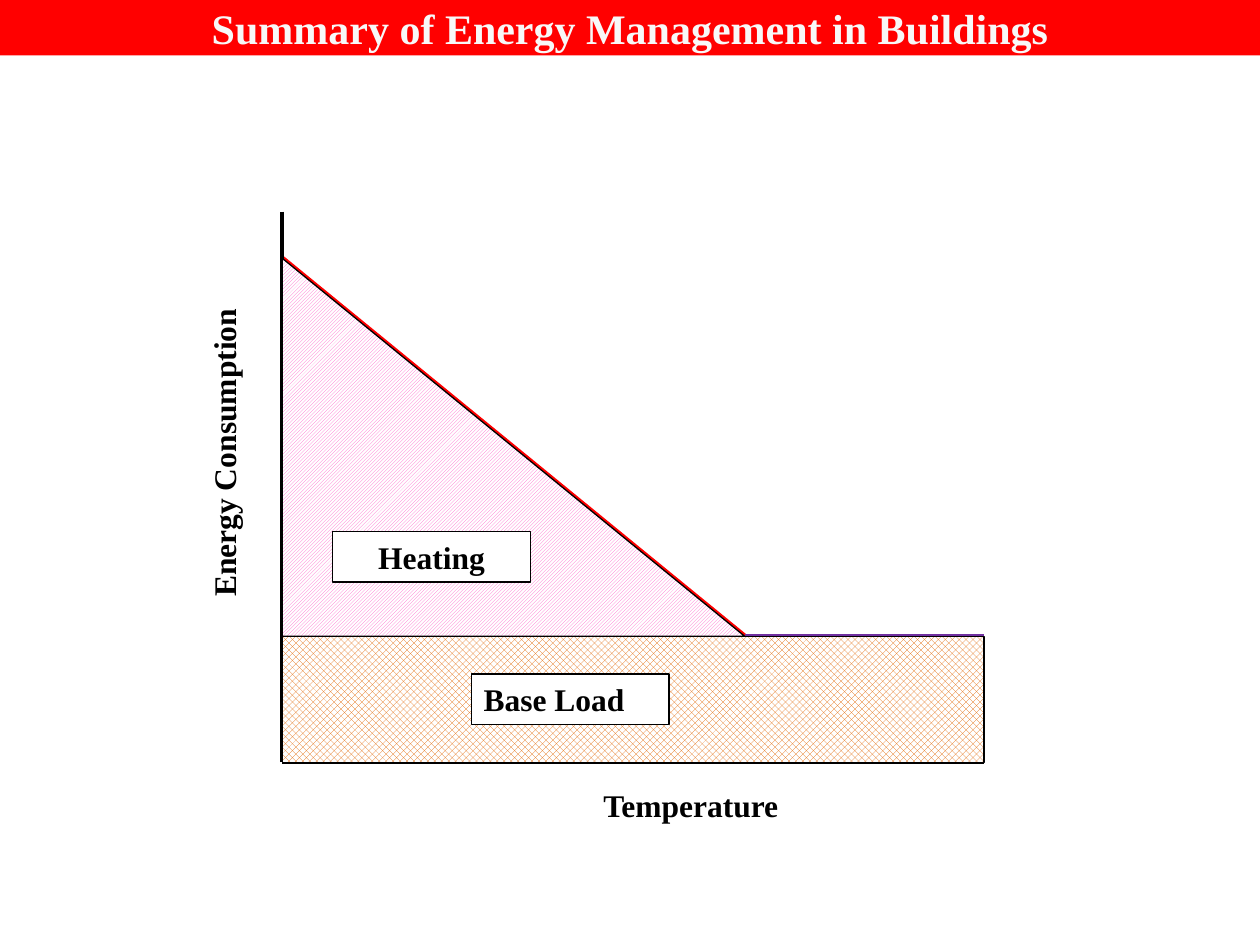
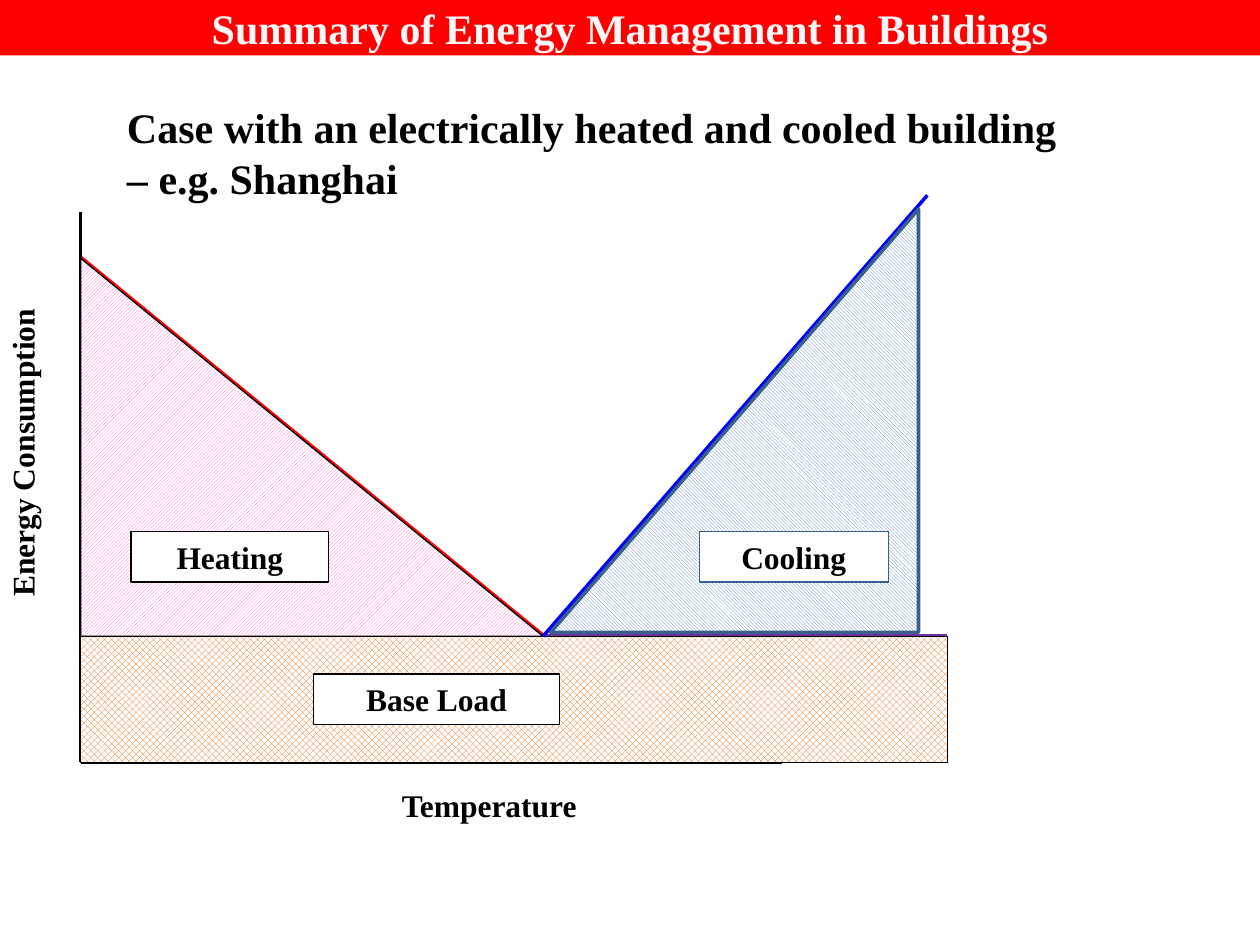
from pptx import Presentation
from pptx.dml.color import RGBColor
from pptx.enum.dml import MSO_PATTERN as Pattern
from pptx.enum.shapes import MSO_CONNECTOR, MSO_SHAPE as Shape
from pptx.enum.text import MSO_ANCHOR, MSO_AUTO_SIZE as AutoSize, PP_ALIGN as Align
from pptx.oxml.ns import qn
from pptx.util import Inches, Pt
from lxml.etree import SubElement

BLACK = RGBColor(0x00, 0x00, 0x00)
WHITE = RGBColor(0xFF, 0xFF, 0xFF)
TITLE_TEXT = RGBColor(0xF8, 0xF8, 0xF8)
RED = RGBColor(0xFF, 0x00, 0x00)
PURPLE = RGBColor(0x70, 0x30, 0xA0)
ORANGE = RGBColor(0xE4, 0x6C, 0x0A)
PINK = RGBColor(0xFF, 0x66, 0xCC)
BLUE = RGBColor(0x00, 0x00, 0xFF)
SOFT_BLUE = RGBColor(0x4F, 0x81, 0xBD)
DARK_BLUE = RGBColor(0x3A, 0x5F, 0x8C)

FONT = "Times New Roman"
TITLE = "Summary of Energy Management in Buildings"
COLS, ROWS = 100, 75  # slide grid

# Rows and widths shared by both energy graphs
AXIS_TOP, HEAT_TOP, BASE_TOP, FLOOR = 16.8, 20.5, 50.5, 60.5
LABEL_ROW, LABEL_H = 42.2, 4
HEAT_W, AXIS_W = 36.7, 55.7


class Deck:
    """Holds the presentation, its style and the current slide."""

    def __init__(self):
        self.prs = Presentation()
        self.prs.slide_width, self.prs.slide_height = Inches(10), Inches(7.5)

    def grid(self, col, row):
        return (round(col * self.prs.slide_width / COLS),
                round(row * self.prs.slide_height / ROWS))

    def set_text(self, shape, text, size=18, color=BLACK, align=Align.LEFT):
        tf = shape.text_frame
        tf.text = text
        tf.word_wrap = True
        tf.auto_size = AutoSize.SHAPE_TO_FIT_TEXT
        p = tf.paragraphs[0]
        p.alignment = align
        font = p.runs[0].font
        font.name, font.size, font.bold = FONT, Pt(size), True
        font.color.rgb = color

    def slide(self, title):
        self.s = self.prs.slides.add_slide(self.prs.slide_layouts[5])
        sp = self.s.shapes.title
        sp.left, sp.top = 0, 0
        sp.width, sp.height = self.grid(COLS, 4.4)
        sp.fill.solid()
        sp.fill.fore_color.rgb = RED
        self.set_text(sp, title, 24, TITLE_TEXT, Align.CENTER)
        sp.text_frame.auto_size = AutoSize.NONE
        sp.text_frame.vertical_anchor = MSO_ANCHOR.MIDDLE

    def line(self, start, end, color=BLACK, width=2):
        cn = self.s.shapes.add_connector(
            MSO_CONNECTOR.STRAIGHT, *self.grid(*start), *self.grid(*end))
        cn.line.color.rgb = color
        cn.line.width = Pt(width)
        SubElement(cn.element.spPr, qn("a:effectLst"))

    def text(self, col, row, width, height, text, size=18, rotation=0):
        sp = self.s.shapes.add_textbox(*self.grid(col, row), *self.grid(width, height))
        sp.rotation = rotation
        self.set_text(sp, text, size)

    def box(self, kind, col, row, width, height, line=BLACK, weight=0.75):
        sp = self.s.shapes.add_shape(
            kind, *self.grid(col, row), *self.grid(width, height))
        sp.shadow.inherit = False
        sp.line.color.rgb = line
        sp.line.width = Pt(weight)
        return sp

    def area(self, kind, col, row, width, height, pattern, color, flip=False, **outline):
        sp = self.box(kind, col, row, width, height, **outline)
        sp.fill.patterned()
        sp.fill.pattern = pattern
        sp.fill.fore_color.rgb = color
        sp.fill.back_color.rgb = WHITE
        if flip:
            sp.element.spPr.xfrm.set("flipH", "1")

    def label(self, col, row, width, text, align=Align.CENTER, line=BLACK):
        sp = self.box(Shape.RECTANGLE, col, row, width, LABEL_H, line)
        sp.fill.solid()
        sp.fill.fore_color.rgb = WHITE
        self.set_text(sp, text, align=align)

    def energy_graph(self, x, base_w, base_label_x, base_label_w, base_align):
        balance = (x + HEAT_W, BASE_TOP)
        # Consumption lines
        self.line((x, HEAT_TOP), balance, RED, 3)
        self.line(balance, (x + base_w, BASE_TOP), PURPLE, 3)
        # Axes and their names
        self.line((x, AXIS_TOP), (x, FLOOR))
        self.line((x + AXIS_W, FLOOR), (x, FLOOR))
        self.text(x + 24.5, 61.9, 29.9, LABEL_H, "Temperature")
        self.text(x - 19.6, 31.4, 29.9, LABEL_H, "Energy Consumption", rotation=270)
        # Base load
        self.area(Shape.RECTANGLE, x, BASE_TOP, base_w, FLOOR - BASE_TOP,
                  Pattern.SOLID_DIAMOND, ORANGE)
        self.label(base_label_x, 53.5, base_label_w, "Base Load", base_align)
        # Heating
        self.area(Shape.RIGHT_TRIANGLE, x, HEAT_TOP, HEAT_W, BASE_TOP - HEAT_TOP,
                  Pattern.LIGHT_UPWARD_DIAGONAL, PINK)
        self.label(x + 4, LABEL_ROW, 15.7, "Heating")
        return balance


def main():
    deck = Deck()

    # Slide 1: heating only
    deck.slide(TITLE)
    deck.energy_graph(22.4, AXIS_W, 37.4, 15.7, Align.LEFT)

    # Slide 2: heating and cooling
    deck.slide(TITLE)
    balance = deck.energy_graph(6.4, 68.8, 24.9, 19.5, Align.CENTER)
    deck.line(balance, (73.6, 15.5), BLUE)
    deck.area(Shape.RIGHT_TRIANGLE, 43.7, 16.6, 29.2, 33.6,
              Pattern.LIGHT_DOWNWARD_DIAGONAL, SOFT_BLUE, flip=True,
              line=DARK_BLUE, weight=2)
    deck.label(55.5, LABEL_ROW, 15, "Cooling", line=DARK_BLUE)
    deck.text(9.1, 7.6, 78, 9.1,
              "Case with an electrically heated and cooled building – e.g. Shanghai", 24)

    deck.prs.save("out.pptx")


if __name__ == "__main__":
    main()
